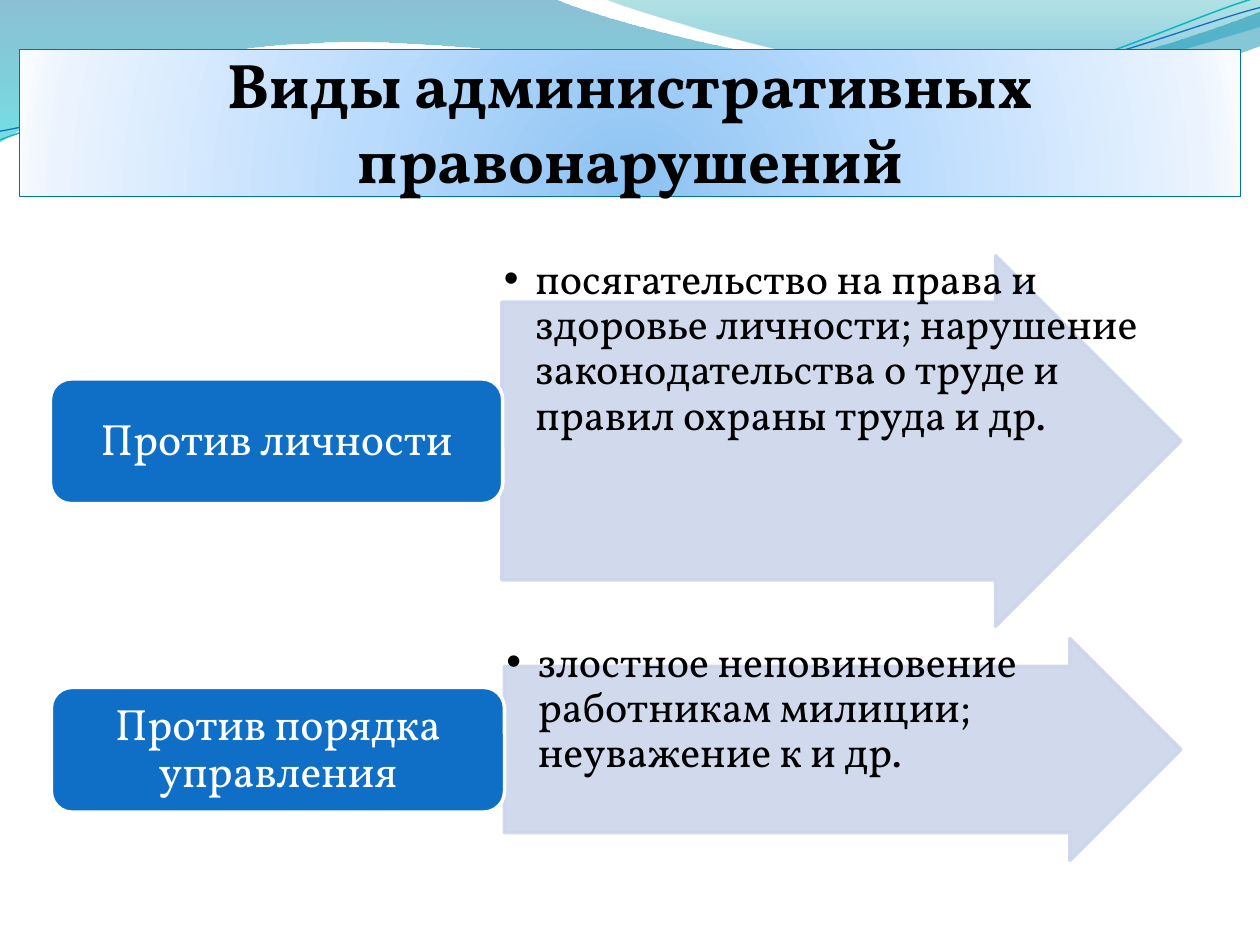
import pptx
import pptx.dml.color
import pptx.enum.shapes
import pptx.enum.text
import pptx.oxml
import pptx.oxml.ns
import pptx.util
from dataclasses import dataclass
from typing import Optional

Pt = pptx.util.Pt
qn = pptx.oxml.ns.qn
SHAPE = pptx.enum.shapes.MSO_SHAPE
ANCHOR = pptx.enum.text.MSO_ANCHOR
ALIGN = pptx.enum.text.PP_ALIGN
NS = pptx.oxml.ns.nsdecls("a")
FONT = "Vollkorn"
COLORS = {
    "blue": "0F6FC6", "arrow": "CCD5EA", "white": "FFFFFF", "black": "000000",
    "teal": "0AB8BF", "border": "0074A1", "outline": "0669C4",
    "cyan": "00C6CF", "sea": "00A1A9", "azure": "008BBF",
    "core": "8BC2F1", "inner": "B9DBFD", "outer": "EAF3FE", "edge": "F8FBFF",
}
DOWN = '<a:lin ang="5400000" scaled="0"/>'
RADIAL = ('<a:path path="circle"><a:fillToRect l="50000" t="130000" '
          'r="50000" b="-30000"/></a:path>')


@dataclass
class Stop:
    pos: int
    color: str
    alpha: int = 100


@dataclass
class Wave:
    start: tuple[float, float]
    segments: list[tuple[float, ...]]  # 2 numbers: line, 6 numbers: Bézier curve
    stops: Optional[list[Stop]] = None
    line: Optional[str] = None
    width: float = 0
    rotation: float = 0


@dataclass
class Offence:
    label: str
    details: str
    box: tuple[float, float, float, float]
    arrow: tuple[float, float, float, float]


WAVES = [
    Wave((0, 0), [(316.8, -0.7), (342.7, 12.2, 478.1, 45.4, 545.8, 45.4),
                  (614.2, 45.4, 689.8, 18.7, 720, 6.5), (720.7, 25.9),
                  (707.8, 31.7, 626.4, 54.7, 537.1, 54),
                  (447.8, 54, 275, 20.2, 185, 24.5),
                  (92.9, 25.9, 33.1, 59.8, -0.7, 81.4)],
         [Stop(0, "border", 45), Stop(100, "cyan", 55)]),
    Wave((344.9, -0.7), [(366.5, 8.6, 491, 44.6, 553.7, 46.8),
                         (616.3, 49.7, 691.9, 23, 720, 15.1), (720, 0)],
         [Stop(0, "sea", 30), Stop(80, "azure", 45)]),
    Wave((-1.4, 63), [(33.8, 51.7, 114.1, 29.4, 199.8, 29.9),
                      (284.9, 30.3, 425.8, 67.3, 512.4, 64.9),
                      (599, 62.4, 676.5, 25.7, 720.2, 15.5)],
         line="teal", width=0.85, rotation=-2.7),
    Wave((-1.1, 58), [(32.9, 53.8, 118.3, 32.5, 204.1, 33),
                      (290.6, 33.4, 428.9, 63.8, 515.5, 61.4),
                      (601.3, 59.6, 678.5, 30.1, 721.4, 21.3)],
         line="blue", width=0.75, rotation=-2.7),
]
OFFENCES = [
    Offence("Против личности",
            "посягательство на права и здоровье личности; нарушение "
            "законодательства о труде и правил охраны труда и др.",
            (28.8, 216.5, 258.5, 71.3), (286.8, 146.2, 388, 211.7)),
    Offence("Против порядка управления",
            "злостное неповиновение работникам милиции; неуважение к и др.",
            (29.3, 392.8, 259, 71.3), (288.2, 365, 386.6, 126.7)),
]


def rgb(name: str):
    return pptx.dml.color.RGBColor.from_string(COLORS[name])


def color_xml(name: str, alpha: int) -> str:
    return f'<a:srgbClr val="{COLORS[name]}"><a:alpha val="{alpha * 1000}"/></a:srgbClr>'


def set_gradient(sp, stops: list[Stop], direction: str) -> None:
    gs = "".join(f'<a:gs pos="{s.pos * 1000}">{color_xml(s.color, s.alpha)}</a:gs>'
                 for s in stops)
    sp.fill.solid()
    old = sp._element.spPr.find(qn("a:solidFill"))
    new = pptx.oxml.parse_xml(
        f'<a:gradFill {NS} rotWithShape="1"><a:gsLst>{gs}</a:gsLst>{direction}</a:gradFill>')
    sp._element.spPr.replace(old, new)


def set_line(sp, color: str, width: float) -> None:
    sp.line.color.rgb = rgb(color)
    sp.line.width = Pt(width)


def add_run(p, text: str, size: float, color: str, bold: bool = False):
    r = p.add_run()
    r.text = text
    r.font.name = FONT
    r.font.size = Pt(size)
    r.font.bold = bold
    r.font.color.rgb = rgb(color)
    return r


def set_frame(tf, anchor, margins: tuple[float, float, float, float]) -> None:
    tf.word_wrap = True
    tf.vertical_anchor = anchor
    tf.margin_left, tf.margin_top, tf.margin_right, tf.margin_bottom = map(Pt, margins)


def add_shape(s, kind, place: tuple[float, ...]):
    sp = s.shapes.add_shape(kind, *map(Pt, place))
    sp.shadow.inherit = False
    return sp


def draw_wave(s, wave: Wave) -> None:
    points = [wave.start]
    for seg in wave.segments:
        points += zip(seg[::2], seg[1::2])
    # Path units are hundredths of a point
    units = [(round(x * 100), round(y * 100)) for x, y in points]
    builder = s.shapes.build_freeform(*units[0], scale=Pt(1) / 100)
    builder.add_line_segments(units[1:], close=wave.stops is not None)
    sp = builder.convert_to_shape()
    # Join each curve's three points into one Bézier segment
    nodes = iter(list(sp._element.spPr.iter(qn("a:lnTo"))))
    for seg in wave.segments:
        first = next(nodes)
        if len(seg) == 6:
            first.tag = qn("a:cubicBezTo")
            for node in (next(nodes), next(nodes)):
                first.append(node[0])
                node.getparent().remove(node)
    sp.rotation = wave.rotation
    sp.shadow.inherit = False
    if wave.stops:
        set_gradient(sp, wave.stops, DOWN)
        sp.line.fill.background()
    else:
        sp.fill.background()
        set_line(sp, wave.line, wave.width)


def draw_offence(s, item: Offence) -> None:
    # Arrow, slightly transparent
    sp = add_shape(s, SHAPE.RIGHT_ARROW, item.arrow)
    sp.adjustments[0], sp.adjustments[1] = 0.75, 0.5
    sp.fill.solid()
    sp.fill.fore_color.rgb = rgb("arrow")
    set_line(sp, "arrow", 2)
    for clr in sp._element.spPr.iter(qn("a:srgbClr")):
        clr.append(pptx.oxml.parse_xml(f'<a:alpha {NS} val="90000"/>'))

    # Bulleted details over the arrow
    tf = s.shapes.add_textbox(*map(Pt, item.arrow)).text_frame
    set_frame(tf, ANCHOR.TOP, (1.2, 1.2, 1.2, 1.2))
    p = tf.paragraphs[0]
    p.level = 1
    p.line_spacing = 0.9
    pPr = p._p.get_or_add_pPr()
    pPr.set("marL", str(Pt(18)))
    pPr.set("indent", str(-Pt(18)))
    pPr.append(pptx.oxml.parse_xml(f'<a:buFont {NS} typeface="Arial"/>'))
    pPr.append(pptx.oxml.parse_xml(f'<a:buChar {NS} char="•"/>'))
    add_run(p, item.details, 24, "black")

    # Label box
    sp = add_shape(s, SHAPE.ROUNDED_RECTANGLE, item.box)
    sp.fill.solid()
    sp.fill.fore_color.rgb = rgb("blue")
    set_line(sp, "white", 2)
    set_frame(sp.text_frame, ANCHOR.MIDDLE, (7.2, 3.6, 7.2, 3.6))
    p = sp.text_frame.paragraphs[0]
    p.alignment = ALIGN.CENTER
    p.line_spacing = 0.9
    add_run(p, item.label, 25, "white")


def draw_title(s, text: str) -> None:
    sp = add_shape(s, SHAPE.RECTANGLE, (11.3, 28.3, 697.7, 84))
    set_gradient(sp, [Stop(0, "core"), Stop(43, "inner"), Stop(93, "outer"),
                      Stop(100, "edge")], RADIAL)
    set_line(sp, "border", 0.75)
    set_frame(sp.text_frame, ANCHOR.BOTTOM, (0, 3.6, 0, 0))
    p = sp.text_frame.paragraphs[0]
    p.alignment = ALIGN.CENTER
    r = add_run(p, text, 36, "black", bold=True)
    r._r.get_or_add_rPr().insert(0, pptx.oxml.parse_xml(
        f'<a:ln {NS} w="{Pt(0.83)}"><a:solidFill>{color_xml("outline", 100)}'
        '</a:solidFill></a:ln>'))


def main() -> None:
    prs = pptx.Presentation()
    prs.slide_width, prs.slide_height = Pt(720), Pt(540)
    s = prs.slides.add_slide(prs.slide_layouts[6])
    for wave in WAVES:
        draw_wave(s, wave)
    for item in OFFENCES:
        draw_offence(s, item)
    draw_title(s, "Виды административных правонарушений")
    prs.save("out.pptx")


if __name__ == "__main__":
    main()
